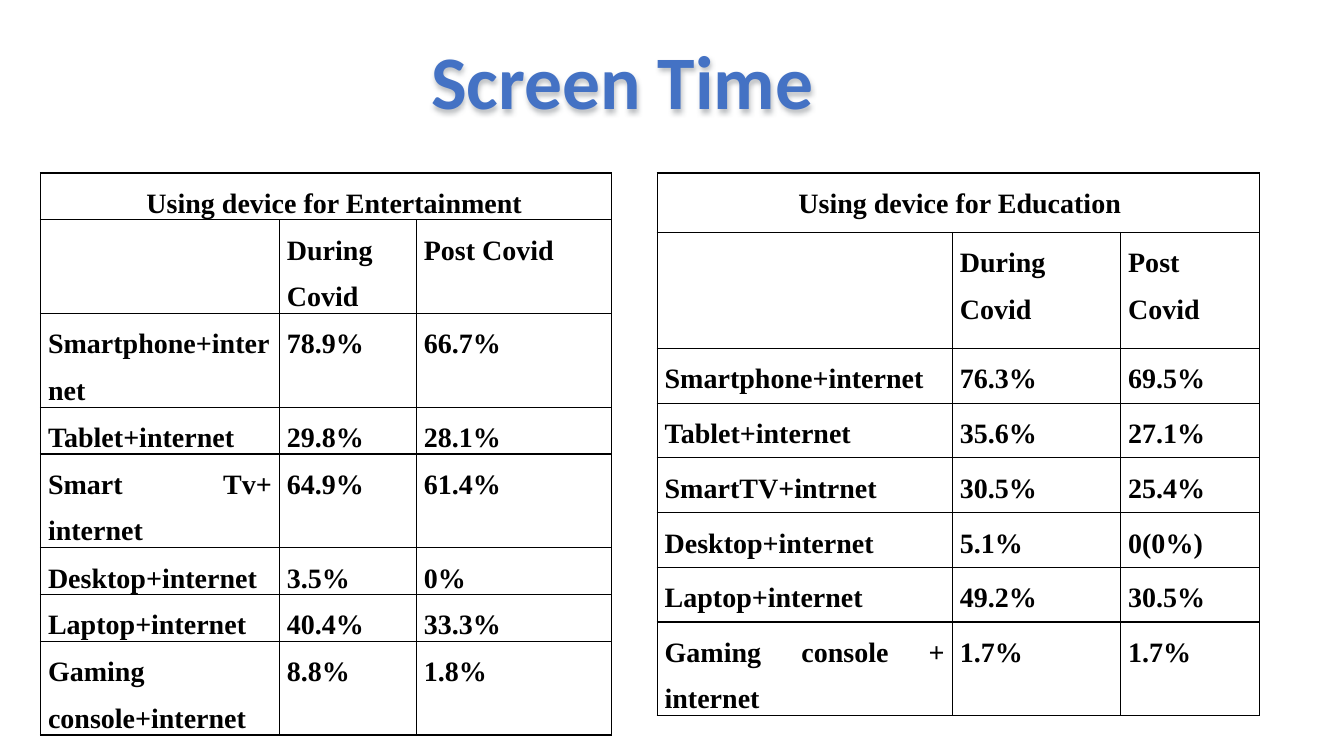
from lxml import etree
from pptx import Presentation
from pptx.dml.color import RGBColor
from pptx.enum.text import MSO_ANCHOR, PP_ALIGN
from pptx.oxml import parse_xml
from pptx.util import Cm, Pt

TITLE = "Screen Time"
TABLES = [
    {
        "heading": "Using device for Education",
        "heading_indent": 3.37,
        "left": 16.56,
        "columns": [7.44, 4.24, 3.51],
        "rows": [1.5, 2.92] + [1.38] * 5 + [2.36],
        "body": [
            ("", "During Covid", "Post Covid"),
            ("Smartphone+internet", "76.3%", "69.5%"),
            ("Tablet+internet", "35.6%", "27.1%"),
            ("SmartTV+intrnet", "30.5%", "25.4%"),
            ("Desktop+internet", "5.1%", "0(0%)"),
            ("Laptop+internet", "49.2%", "30.5%"),
            ("Gaming console + internet", "1.7%", "1.7%"),
        ],
    },
    {
        "heading": "Using device for Entertainment",
        "heading_indent": 2.48,
        "left": 1.02,
        "columns": [6.02, 3.45, 4.93],
        "rows": [1.18, 2.36, 2.36, 1.18, 2.36, 1.18, 1.18, 2.36],
        "body": [
            ("", "During Covid", "Post Covid"),
            ("Smartphone+internet", "78.9%", "66.7%"),
            ("Tablet+internet", "29.8%", "28.1%"),
            ("Smart Tv+ internet", "64.9%", "61.4%"),
            ("Desktop+internet", "3.5%", "0%"),
            ("Laptop+internet", "40.4%", "33.3%"),
            ("Gaming console+internet", "8.8%", "1.8%"),
        ],
    },
]

BLACK = RGBColor(0x00, 0x00, 0x00)
BLUE = RGBColor(0x44, 0x72, 0xC4)
CENTER, JUSTIFY = PP_ALIGN.CENTER, PP_ALIGN.JUSTIFY
BOTTOM = MSO_ANCHOR.BOTTOM
TABLE_TOP = 4.36
CELL_MARGIN = 0.19
LINE_HEIGHT = Pt(33.2)
NAMESPACE = "http://schemas.openxmlformats.org/drawingml/2006/main"
TITLE_SHADOW = (
    f'<a:effectLst xmlns:a="{NAMESPACE}">'
    '<a:outerShdw blurRad="38100" dist="25400" dir="5400000" algn="ctr" rotWithShape="0">'
    '<a:srgbClr val="6E747A"><a:alpha val="43000"/></a:srgbClr>'
    "</a:outerShdw></a:effectLst>"
)


def write_text(frame, text, *, size, font, color, align, spacing, indent=0):
    paragraph = frame.paragraphs[0]
    paragraph.alignment = align
    paragraph.line_spacing = spacing
    if indent:
        paragraph._p.get_or_add_pPr().set("marL", str(Cm(indent)))
    run = paragraph.add_run()
    run.text = text
    run.font.size = Pt(size)
    run.font.bold = True
    run.font.color.rgb = color
    run.font.name = font


def add_borders(cell):
    properties = cell._tc.get_or_add_tcPr()
    for position, side in enumerate(("lnL", "lnR", "lnT", "lnB")):
        line = etree.Element(f"{{{NAMESPACE}}}{side}", w=str(Pt(1)))
        fill = etree.SubElement(line, f"{{{NAMESPACE}}}solidFill")
        etree.SubElement(fill, f"{{{NAMESPACE}}}srgbClr", val=str(BLACK))
        properties.insert(position, line)


def add_title(slide):
    shape = slide.shapes.add_textbox(Cm(4.24), Cm(3.05), Cm(22.89), Cm(0.13))
    shape._element.spPr.append(parse_xml(TITLE_SHADOW))
    frame = shape.text_frame
    frame.word_wrap = True
    frame.vertical_anchor = BOTTOM
    write_text(frame, TITLE, size=54, font="Calibri", color=BLUE,
               align=CENTER, spacing=0.9)


def add_device_table(slide, content):
    widths, heights = content["columns"], content["rows"]
    shape = slide.shapes.add_table(
        len(heights), len(widths), Cm(content["left"]), Cm(TABLE_TOP),
        Cm(sum(widths)), Cm(sum(heights)))
    table = shape.table
    table.first_row = table.horz_banding = False
    for column, width in zip(table.columns, widths):
        column.width = Cm(width)
    for row, height in zip(table.rows, heights):
        row.height = Cm(height)
    table.cell(0, 0).merge(table.cell(0, len(widths) - 1))

    texts = [(content["heading"], "", "")] + content["body"]
    for row, values in zip(table.rows, texts):
        for cell, text in zip(row.cells, values):
            cell.fill.background()
            cell.margin_left = cell.margin_right = Cm(CELL_MARGIN)
            cell.margin_top = cell.margin_bottom = 0
            add_borders(cell)
            if text:
                indent = content["heading_indent"] if cell.is_merge_origin else 0
                write_text(cell.text_frame, text, size=20, font="Times New Roman",
                           color=BLACK, align=JUSTIFY, spacing=LINE_HEIGHT,
                           indent=indent)


def main():
    presentation = Presentation()
    presentation.slide_width = Cm(33.87)
    presentation.slide_height = Cm(19.05)
    slide = presentation.slides.add_slide(presentation.slide_layouts[6])
    add_title(slide)
    for content in TABLES:
        add_device_table(slide, content)
    presentation.save("out.pptx")


if __name__ == "__main__":
    main()
